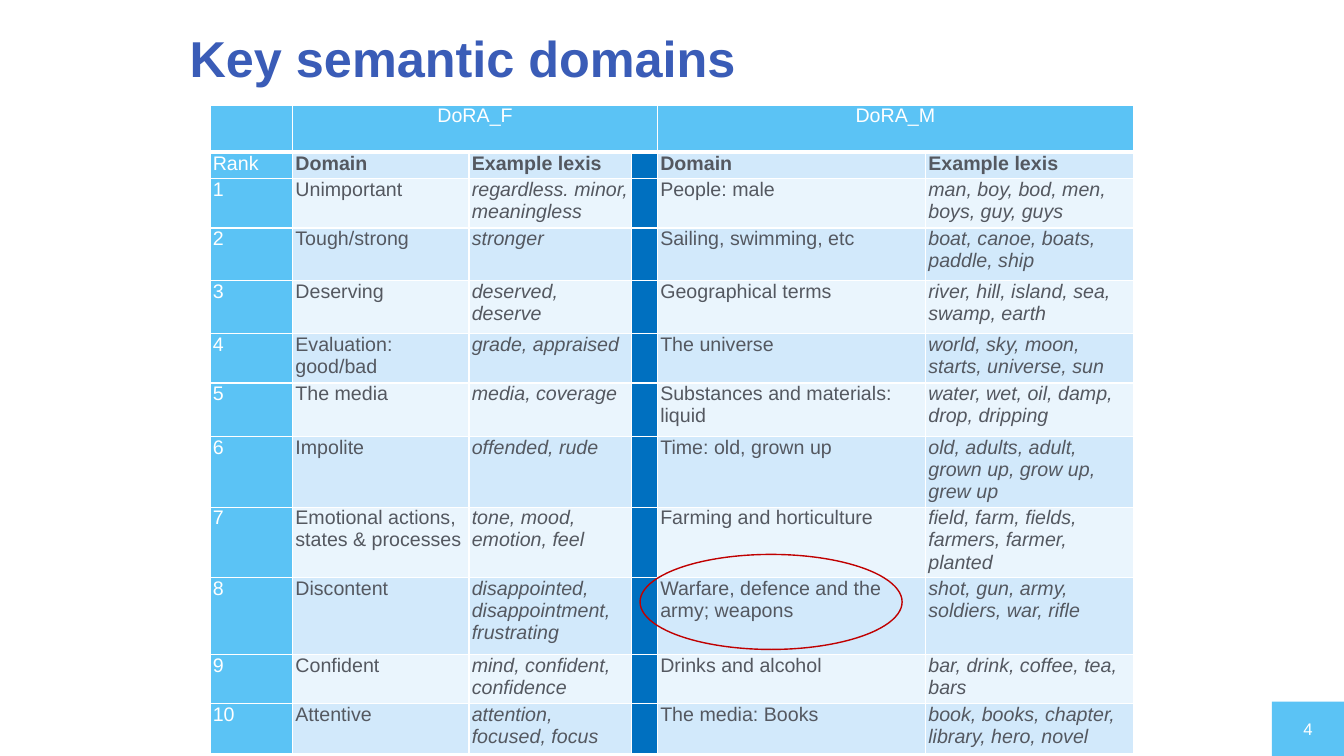
"""Builds a slide with a table of key semantic domains in two corpora."""
from lxml import etree
from pptx import Presentation
from pptx.dml.color import RGBColor
from pptx.enum.shapes import MSO_SHAPE
from pptx.enum.text import MSO_ANCHOR, MSO_AUTO_SIZE, PP_ALIGN
from pptx.oxml.ns import qn
from pptx.util import Pt

LEFT, CENTER = PP_ALIGN.LEFT, PP_ALIGN.CENTER
TOP, MIDDLE = MSO_ANCHOR.TOP, MSO_ANCHOR.MIDDLE
GROW = MSO_AUTO_SIZE.SHAPE_TO_FIT_TEXT
RECTANGLE, OVAL = MSO_SHAPE.RECTANGLE, MSO_SHAPE.OVAL

WHITE, SKY, BLUE, GREY = "FFFFFF", "5BC3F5", "0070C0", "545860"
TITLE_BLUE, RED = "3A5CB7", "C00000"
BANDS = ("D2E9FB", "EAF5FD")

COLUMN_WIDTHS = (59.04, 126, 115.92, 18.72, 191.52, 148.32)
ROW_HEIGHTS = (33.84, 18.72, 35.28, 37.8, 37.8, 35.28, 38.16, 50.4, 50.4, 54.72, 35.28, 35.28)
SPACER = 3
HEADINGS = ("Rank", "Domain", "Example lexis", "", "Domain", "Example lexis")
DOMAINS = (
    ("Unimportant", "regardless. minor, meaningless",
     "People: male", "man, boy, bod, men, boys, guy, guys"),
    ("Tough/strong", "stronger",
     "Sailing, swimming, etc", "boat, canoe, boats, paddle, ship"),
    ("Deserving", "deserved, deserve",
     "Geographical terms", "river, hill, island, sea, swamp, earth"),
    ("Evaluation: good/bad", "grade, appraised",
     "The universe", "world, sky, moon, starts, universe, sun"),
    ("The media", "media, coverage",
     "Substances and materials: liquid", "water, wet, oil, damp, drop, dripping"),
    ("Impolite", "offended, rude",
     "Time: old, grown up", "old, adults, adult, grown up, grow up, grew up"),
    ("Emotional actions, states & processes", "tone, mood, emotion, feel",
     "Farming and horticulture", "field, farm, fields, farmers, farmer, planted"),
    ("Discontent", "disappointed, disappointment, frustrating",
     "Warfare, defence and the army; weapons", "shot, gun, army, soldiers, war, rifle"),
    ("Confident", "mind, confident, confidence",
     "Drinks and alcohol", "bar, drink, coffee, tea, bars"),
    ("Attentive", "attention, focused, focus",
     "The media: Books", "book, books, chapter, library, hero, novel"),
)


def rgb(value):
    return RGBColor.from_string(value)


def assign(target, values):
    for name, value in values.items():
        setattr(target, name, value)


class SlideBuilder:
    font_name = "Arial"
    table_size = 14

    def __init__(self, slide):
        self.slide = slide

    def put_text(self, frame, text, size, color, align=LEFT, **style):
        paragraph = frame.paragraphs[0]
        paragraph.alignment = align
        if not text:
            ending = etree.SubElement(paragraph._p, qn("a:endParaRPr"))
            ending.set("sz", str(size * 100))
            return
        run = paragraph.add_run()
        run.text = text
        assign(run.font, {"name": self.font_name, "size": Pt(size), **style})
        run.font.color.rgb = rgb(color)

    def title(self, text, left, top, width, height):
        heading = self.slide.shapes.title
        assign(heading, {"left": Pt(left), "top": Pt(top),
                         "width": Pt(width), "height": Pt(height)})
        assign(heading.text_frame, {"word_wrap": True, "auto_size": GROW,
                                    "vertical_anchor": TOP})
        self.put_text(heading.text_frame, text, 36, TITLE_BLUE, bold=True)

    def shape(self, kind, left, top, width, height, fill=None, line=None):
        figure = self.slide.shapes.add_shape(kind, Pt(left), Pt(top), Pt(width), Pt(height))
        figure.shadow.inherit = False
        for part, color in ((figure.fill, fill), (figure.line.fill, line)):
            if color:
                part.solid()
                part.fore_color.rgb = rgb(color)
            else:
                part.background()
        if line:
            figure.line.width = Pt(1)
        return figure

    def page_number(self, text, left, top, width, height):
        badge = self.shape(RECTANGLE, left, top, width, height, fill=SKY)
        assign(badge.text_frame, {"margin_left": 0, "margin_right": 0, "margin_top": 0,
                                  "margin_bottom": 0, "vertical_anchor": MIDDLE})
        self.put_text(badge.text_frame, text, 12, WHITE, CENTER)

    def table(self, left, top, widths, heights):
        grid = self.slide.shapes.add_table(
            len(heights), len(widths), Pt(left), Pt(top),
            Pt(sum(widths)), Pt(sum(heights))).table
        for column, width in zip(grid.columns, widths):
            column.width = Pt(width)
        for row, height in zip(grid.rows, heights):
            row.height = Pt(height)
        return grid

    def borders(self, cell, bottom):
        properties = cell._tc.get_or_add_tcPr()
        for side, width in (("L", 1), ("R", 1), ("T", 1), ("B", bottom)):
            edge = etree.SubElement(properties, qn(f"a:ln{side}"), w=str(Pt(width)))
            paint = etree.SubElement(edge, qn("a:solidFill"))
            etree.SubElement(paint, qn("a:srgbClr"), val=WHITE)

    def cell(self, cell, text, fill, color=GREY, align=LEFT, bottom=1, **style):
        self.borders(cell, bottom)
        assign(cell, {"margin_left": Pt(2), "margin_right": Pt(2),
                      "margin_top": 0, "margin_bottom": 0})
        cell.fill.solid()
        cell.fill.fore_color.rgb = rgb(fill)
        self.put_text(cell.text_frame, text, self.table_size, color, align, **style)


def fill_domains(builder, grid):
    corpora = ("", "DoRA_F", "", "", "DoRA_M", "")
    for column, corpus in enumerate(corpora):
        builder.cell(grid.cell(0, column), corpus, SKY, WHITE, CENTER, bottom=3, bold=False)
    grid.cell(0, 1).merge(grid.cell(0, 3))
    grid.cell(0, 4).merge(grid.cell(0, 5))

    ranked = [(str(rank), *entry[:2], "", *entry[2:])
              for rank, entry in enumerate(DOMAINS, 1)]
    for row, texts in enumerate([HEADINGS, *ranked], 1):
        for column, text in enumerate(texts):
            is_rank = column == 0
            fill = {0: SKY, SPACER: BLUE}.get(column, BANDS[(row - 1) % 2])
            builder.cell(grid.cell(row, column), text, fill, WHITE if is_rank else GREY,
                         bold=row == 1 and not is_rank,
                         italic=row > 1 and column in (2, 5))


def main():
    presentation = Presentation()
    assign(presentation, {"slide_width": Pt(960), "slide_height": Pt(540)})
    builder = SlideBuilder(presentation.slides.add_slide(presentation.slide_layouts[5]))
    builder.page_number("4", 908.5, 501.2, 51.5, 38.8)
    fill_domains(builder, builder.table(150, 75, COLUMN_WIDTHS, ROW_HEIGHTS))
    builder.title("Key semantic domains", 128.2, 16, 555.8, 51)
    builder.shape(OVAL, 457.2, 396, 187.2, 67.9, line=RED)
    presentation.save("out.pptx")


if __name__ == "__main__":
    main()
